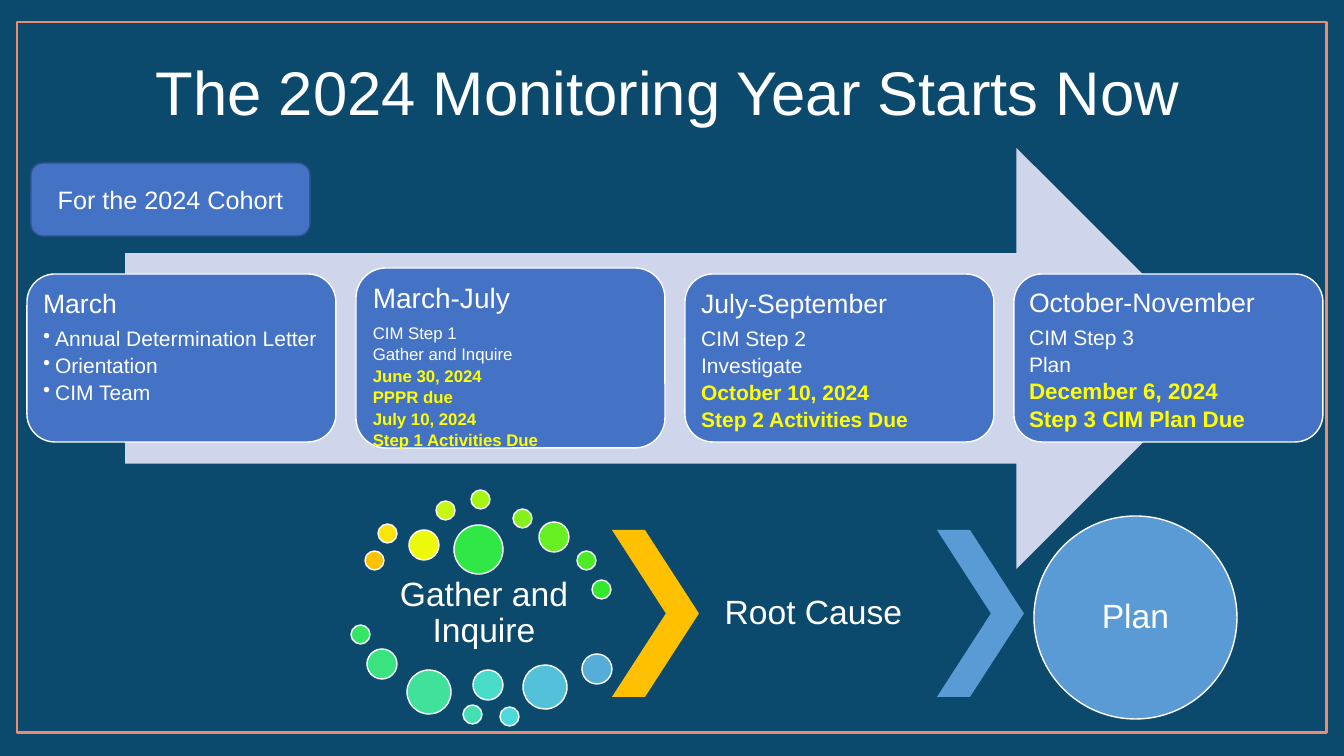
from lxml import etree
from pptx import Presentation
from pptx import util as u
from pptx.dml.color import RGBColor
from pptx.enum import shapes, text
from pptx.oxml import ns

PX = 914400 / 100.8
NAVY = RGBColor(0x0C, 0x4A, 0x6D)
CORAL = RGBColor(0xED, 0x8B, 0x6F)
LAVENDER = RGBColor(0xCF, 0xD5, 0xEA)
BLUE = RGBColor(0x44, 0x72, 0xC4)
DARK_BLUE = RGBColor(0x32, 0x54, 0x91)
SKY = RGBColor(0x5B, 0x9B, 0xD5)
GOLD = RGBColor(0xFF, 0xC0, 0x00)
YELLOW = RGBColor(0xFF, 0xFF, 0x00)
WHITE = RGBColor(0xFF, 0xFF, 0xFF)

FORM = shapes.MSO_SHAPE
MIDDLE = text.MSO_ANCHOR.MIDDLE
CENTER = text.PP_ALIGN.CENTER


def write(frame, words, size=24, color=WHITE, bold=False, align=CENTER,
          anchor=MIDDLE, inset=3, spacing=0.9, after=0, bullet=False):
    frame.word_wrap = True
    frame.vertical_anchor = anchor
    frame.margin_left = frame.margin_right = round(inset * PX)
    frame.margin_top = frame.margin_bottom = round(inset * PX)
    line = frame.add_paragraph() if frame.text else frame.paragraphs[0]
    if bullet:
        properties = line._p.get_or_add_pPr()
        properties.set("marL", str(round(12 * PX)))
        properties.set("indent", str(round(-12 * PX)))
        etree.SubElement(properties, ns.qn("a:buChar")).set("char", "•")
    line.alignment = align
    line.line_spacing = spacing
    line.space_before = u.Pt(0)
    line.space_after = u.Pt(after)
    run = line.add_run()
    run.text = words
    run.font.name = "Arial"
    run.font.size = u.Pt(size)
    run.font.bold = bold
    run.font.color.rgb = color


def draw(form, left, top, width, height, fill=None, outline=None, weight=1):
    shape = slide.shapes.add_shape(
        form, *(round(n * PX) for n in (left, top, width, height)))
    shape.shadow.inherit = False
    if fill is None:
        shape.fill.background()
    else:
        shape.fill.solid()
        shape.fill.fore_color.rgb = fill
    if outline is None:
        shape.line.fill.background()
    else:
        shape.line.color.rgb = outline
        shape.line.width = u.Pt(weight)
    return shape


deck = Presentation()
deck.slide_width = round(1344 * PX)
deck.slide_height = round(756 * PX)
slide = deck.slides.add_slide(deck.slide_layouts[5])
slide.background.fill.solid()
slide.background.fill.fore_color.rgb = NAVY

heading = slide.shapes.title
heading.left, heading.top, heading.width, heading.height = (
    round(n * PX) for n in (14, 22, 1308, 148))
write(heading.text_frame, "The 2024 Monitoring Year Starts Now", size=44, inset=5)

draw(FORM.RECTANGLE, 17, 22, 1310, 711, outline=CORAL, weight=2)
draw(FORM.RIGHT_ARROW, 125, 148, 1102, 421, fill=LAVENDER)

periods = [
    ("March", 19, 274, 168, 8, 15, 15, 3,
     ["Annual Determination Letter", "Orientation", "CIM Team"], []),
    ("March-July", 20, 268, 180, 8, 12, 12, 2.4,
     ["CIM Step 1", "Gather and Inquire"],
     ["June 30, 2024", "PPPR due", "July 10, 2024", "Step 1 Activities Due"]),
    ("July-September", 19, 274, 168, 8, 15, 15, 3,
     ["CIM Step 2", "Investigate"],
     ["October 10, 2024", "Step 2 Activities Due"]),
    ("October-November", 19, 274, 168, 7, 15, 16, 2.6,
     ["CIM Step 3", "Plan"],
     ["December 6, 2024", "Step 3 CIM Plan Due"]),
]
for i, period in enumerate(periods):
    months, months_size, top, height, inset, step_size, due_size, gap, steps, dues = period
    card = draw(FORM.ROUNDED_RECTANGLE, 27 + 329 * i, top, 309, height, BLUE, WHITE)
    layout = dict(align=text.PP_ALIGN.LEFT, anchor=text.MSO_ANCHOR.TOP, inset=inset)
    write(card.text_frame, months, size=months_size, after=7, **layout)
    for step in steps:
        write(card.text_frame, step, size=step_size, after=gap, bullet=not dues, **layout)
    for due in dues:
        write(card.text_frame, due, size=due_size, after=gap,
              color=YELLOW, bold=True, **layout)

cohort = draw(FORM.ROUNDED_RECTANGLE, 31, 163, 279, 73, BLUE, DARK_BLUE)
write(cohort.text_frame, "For the 2024 Cohort", size=18, inset=5, spacing=1.0)

bubbles = [
    (365, 551, 19, "FFC000"), (378, 524, 19, "FCE506"), (409, 530, 30, "ECF90B"),
    (436, 501, 19, "C7F711"), (471, 490, 19, "A4F416"), (513, 509, 19, "84F11B"),
    (539, 522, 30, "67EF21"), (577, 551, 19, "4BEC26"), (592, 580, 19, "32EA2B"),
    (454, 525, 49, "30E845"), (351, 625, 19, "35E564"), (367, 649, 30, "3AE380"),
    (407, 670, 44, "3FE19B"), (463, 705, 19, "44DFB3"), (473, 670, 30, "49DDC9"),
    (500, 707, 19, "4DD8DB"), (523, 665, 44, "52C1D9"), (582, 654, 30, "56ADD7"),
]
for left, top, size, color in bubbles:
    draw(FORM.OVAL, left, top, size, size, RGBColor.from_string(color), WHITE)

for left, color in [(612, GOLD), (937, SKY)]:
    chevron = draw(FORM.CHEVRON, left, 530, 87, 167, fill=color)
    chevron.adjustments[0] = 0.62

stages = [("Gather and Inquire", 365, 574, 79), ("Root Cause ", 699, 530, 167)]
for words, left, top, height in stages:
    stage = slide.shapes.add_textbox(
        *(round(n * PX) for n in (left, top, 238, height)))
    write(stage.text_frame, words)

plan = draw(FORM.OVAL, 1034, 516, 203, 203, SKY, WHITE)
write(plan.text_frame, "Plan", inset=0)

deck.save("out.pptx")
